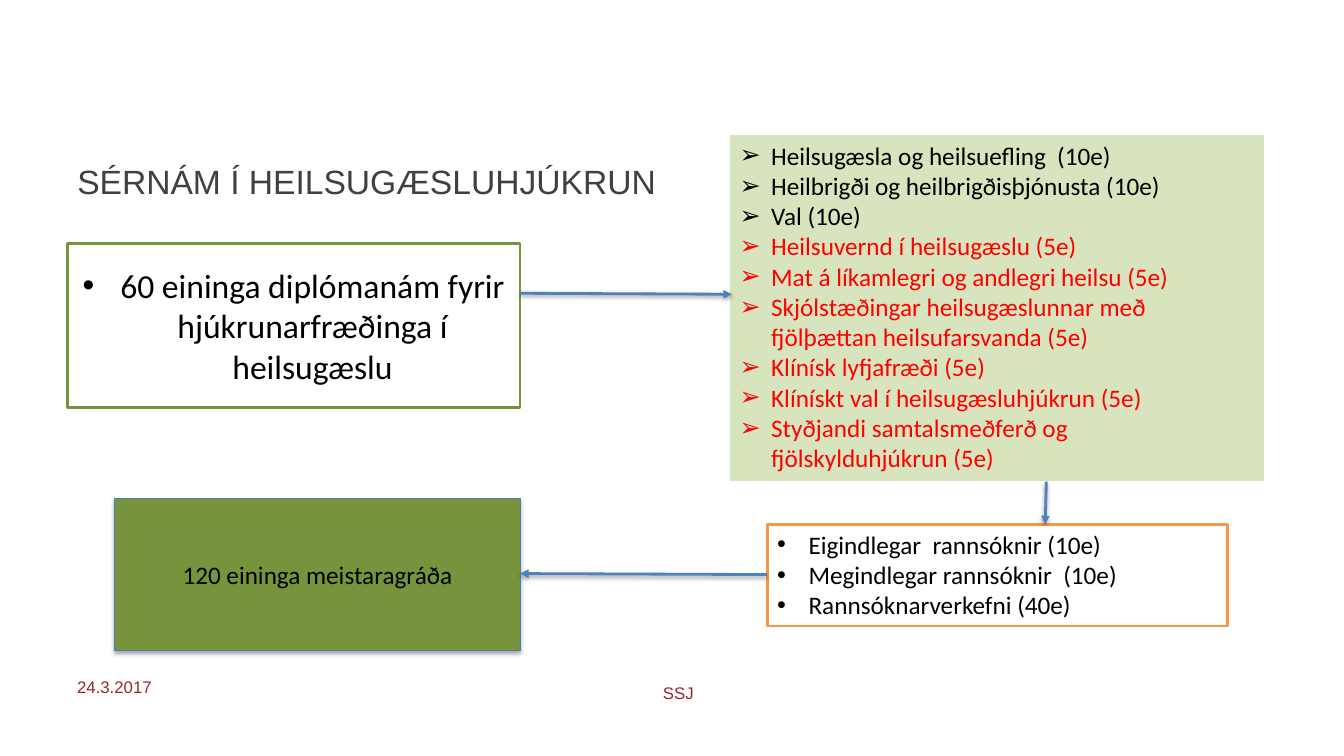
from lxml.etree import SubElement as Sub
from pptx import Presentation
from pptx.dml.color import RGBColor as Rgb
from pptx.enum.shapes import MSO_CONNECTOR as Con, MSO_SHAPE as Geo
from pptx.enum.text import MSO_ANCHOR as Anc, MSO_AUTO_SIZE as Fit, PP_ALIGN as Al
from pptx.oxml.ns import qn
from pptx.util import Pt

HUES = {
    "ink": "000000", "gray": "404040", "wine": "9B262D", "red": "FF0000",
    "green": "77933C", "pale": "D7E4BD", "white": "FFFFFF",
    "orange": "F79646", "edge": "4B7EBC", "blue": "4F81BD",
}
CORE = [
    "Heilsugæsla og heilsuefling  (10e)",
    "Heilbrigði og heilbrigðisþjónusta (10e)",
    "Val (10e)",
]
FIELD = [
    "Heilsuvernd í heilsugæslu (5e)",
    "Mat á líkamlegri og andlegri heilsu (5e)",
    "Skjólstæðingar heilsugæslunnar með fjölþættan heilsufarsvanda (5e)",
    "Klínísk lyfjafræði (5e)",
    "Klínískt val í heilsugæsluhjúkrun (5e)",
    "Styðjandi samtalsmeðferð og \vfjölskylduhjúkrun (5e)",
]
STUDY = [
    "Eigindlegar  rannsóknir (10e)",
    "Megindlegar rannsóknir  (10e)",
    "Rannsóknarverkefni (40e)",
]


def hue(name):
    """Return the colour with this name."""
    return Rgb.from_string(HUES[name])


def put(obj, vals):
    """Set each attribute in the dict on the object."""
    for key, val in vals.items():
        setattr(obj, key, val)


class Deck:
    """Hold the style and the current slide."""

    def __init__(self):
        """Start a wide deck with one title and content slide."""
        self.prs = Presentation()
        put(self.prs, {"slide_width": Pt(960), "slide_height": Pt(540)})
        self.slide = self.prs.slides.add_slide(self.prs.slide_layouts[1])
        self.shapes = self.slide.shapes

    def place(self, shape, box):
        """Move and size a shape."""
        keys = ("left", "top", "width", "height")
        put(shape, dict(zip(keys, map(Pt, box))))

    def mark(self, para, char, dent):
        """Give a paragraph a hanging bullet."""
        ppr = para._p.get_or_add_pPr()
        for key, val in {"marL": Pt(dent), "indent": -Pt(dent)}.items():
            ppr.set(key, str(val))
        Sub(ppr, qn("a:buFont"), typeface="Arial")
        Sub(ppr, qn("a:buChar"), char=char)

    def label(self, shape, rows, size=18, face="Calibri", align=Al.LEFT,
              anchor=Anc.TOP, fit=Fit.NONE, char=None, dent=22.5):
        """Fill a shape with (text, colour) rows."""
        frame = shape.text_frame
        put(frame, {"word_wrap": True, "auto_size": fit, "vertical_anchor": anchor})
        for num, (text, tint) in enumerate(rows):
            para = frame.add_paragraph() if num else frame.paragraphs[0]
            para.text = text
            if char:
                self.mark(para, char, dent)
            put(para, {"alignment": align, "space_before": Pt(0)})
            for run in para.runs:
                put(run.font, {"size": Pt(size), "name": face})
                run.font.color.rgb = hue(tint)

    def title(self, box, text):
        """Fill the slide title."""
        self.place(self.shapes.title, box)
        self.label(self.shapes.title, [(text, "gray")], 24, "Arial", anchor=Anc.MIDDLE)

    def body(self, box, text, edge):
        """Fill the framed body placeholder."""
        shape = self.slide.placeholders[1]
        self.place(shape, box)
        self.frame(shape, edge, 2)
        self.label(shape, [(text, "ink")], 24, align=Al.CENTER,
                   anchor=Anc.MIDDLE, char="•", dent=27)

    def note(self, box, text, **form):
        """Add a small line of text at the foot."""
        shape = self.shapes.add_textbox(*map(Pt, box))
        self.label(shape, [(text, "wine")], 12, "Arial", **form)

    def frame(self, shape, edge, width):
        """Draw the outline of a shape."""
        shape.line.color.rgb = hue(edge)
        shape.line.width = Pt(width)

    def shade(self, shape, depth, dist):
        """Cast a soft shadow straight down."""
        prop = shape.element.spPr
        fx = prop.find(qn("a:effectLst"))
        if fx is None:
            fx = Sub(prop, qn("a:effectLst"))
        cast = Sub(fx, qn("a:outerShdw"), blurRad=str(Pt(3.1)), dist=str(Pt(dist)),
                   dir="5400000", rotWithShape="0")
        tint = Sub(cast, qn("a:srgbClr"), val=HUES["ink"])
        Sub(tint, qn("a:alpha"), val=str(depth * 1000))

    def panel(self, box, rows, fill, edge=None, width=2, **form):
        """Add a filled box with text."""
        shape = self.shapes.add_shape(Geo.RECTANGLE, *map(Pt, box))
        shape.shadow.inherit = False
        shape.fill.solid()
        shape.fill.fore_color.rgb = hue(fill)
        if edge:
            self.frame(shape, edge, width)
        else:
            shape.line.fill.background()
        self.label(shape, rows, **form)
        return shape

    def arrow(self, *ends):
        """Add an arrow from one point to another."""
        line = self.shapes.add_connector(Con.STRAIGHT, *map(Pt, ends))
        self.frame(line, "blue", 2)
        Sub(line.element.spPr.find(qn("a:ln")), qn("a:tailEnd"), type="triangle")
        self.shade(line, 38, 1.6)


def main():
    """Build the slide and save it."""
    deck = Deck()
    deck.title((48, 84, 864, 90), "SÉRNÁM Í HEILSUGÆSLUHJÚKRUN")
    deck.note((185, 480, 599, 29), "SSJ", align=Al.CENTER, anchor=Anc.MIDDLE)
    deck.note((48, 480, 120, 29), "24.3.2017")
    deck.body((48, 174, 323.5, 117),
              "60 eininga diplómanám fyrir hjúkrunarfræðinga í heilsugæslu", "green")
    grad = deck.panel((82, 356.4, 289.5, 108), [("120 eininga meistaragráða", "ink")],
                      "green", "edge", 0.75, align=Al.CENTER, anchor=Anc.MIDDLE)
    deck.shade(grad, 35, 1.8)
    rows = [(text, "ink") for text in CORE] + [(text, "red") for text in FIELD]
    grow = Fit.SHAPE_TO_FIT_TEXT
    deck.panel((521.3, 96.5, 381.6, 247), rows, "pale", fit=grow, char="➢")
    deck.panel((548, 374.4, 329, 72.7), [(text, "ink") for text in STUDY],
               "white", "orange", fit=grow, char="•")
    deck.arrow(371.5, 209.5, 522.7, 210.2)
    deck.arrow(747.4, 344, 746.6, 374.4)
    deck.arrow(548, 410.4, 371.5, 409.7)
    deck.prs.save("out.pptx")


if __name__ == "__main__":
    main()
